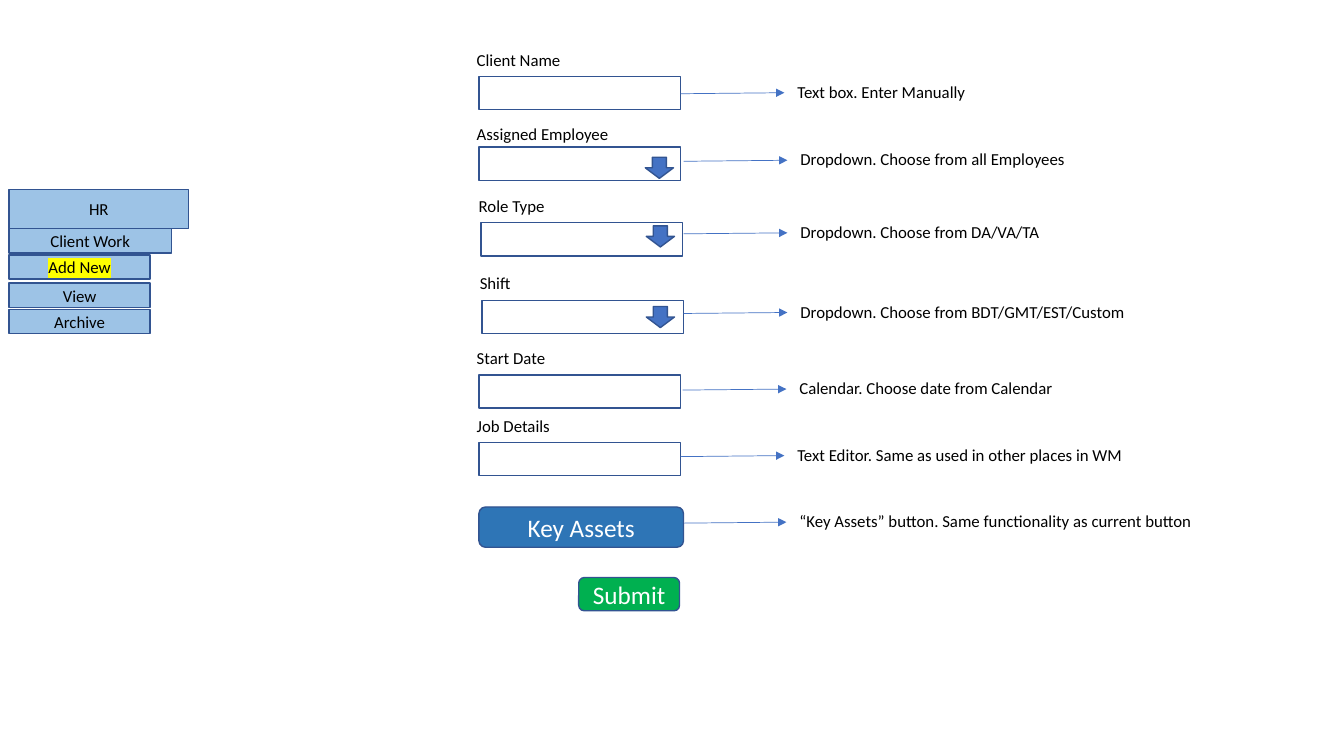
import pptx
import pptx.util
import pptx.dml.color
import pptx.enum.shapes
import pptx.enum.text
import pptx.oxml
import pptx.oxml.ns

PX = 9144  # 100 px to the inch
FONT = "Calibri"
BLACK, WHITE, YELLOW = "000000", "FFFFFF", "FFFF00"
OUTLINE, BLUE, MENU_BLUE = "325491", "4472C4", "9DC3E6"
SHAPE = pptx.enum.shapes.MSO_SHAPE

# Menu: text, top, width, height, highlight
MENU = [
    ("HR", 188, 178, 39, None),
    ("Client Work", 227, 161, 24, None),
    ("Add New", 253, 140, 24, YELLOW),
    ("View", 281, 140, 24, None),
    ("Archive", 307, 140, 24, None),
]
MENU_LEFT = 9

# Form fields: label, label width, label top, box left, box top, dropdown arrow (left, top)
FIELDS = [
    ("Client Name", 104, 44, 475, 76, None),
    ("Assigned Employee", 152, 118, 475, 146, (640, 156)),
    ("Role Type", 86, 189, 477, 221, (641, 224)),
    ("Shift", 51, 266, 478, 298, (641, 304)),
    ("Start Date", 89, 340, 475, 372, None),
    ("Job Details", 94, 408, 475, 439, None),
]
BOX_W, BOX_H = 200, 33

# Notes: text, text width, pointer start x, pointer start y
NOTES = [
    ("Text box. Enter Manually", 188, 675, 93),
    ("Dropdown. Choose from all Employees", 285, 678, 160),
    ("Dropdown. Choose from DA/VA/TA", 260, 678, 232),
    ("Dropdown. Choose from BDT/GMT/EST/Custom", 345, 678, 311),
    ("Calendar. Choose date from Calendar", 274, 677, 387),
    ("Text Editor. Same as used in other places in WM", 346, 675, 453),
    ("“Key Assets” button. Same functionality as current button", 414, 677, 519),
]
POINTER_W, NOTE_GAP, NOTE_RISE = 103, 3, 17
TEXT_H = 30

# Buttons: text, left, top, width, height, fill
BUTTONS = [
    ("Key Assets", 475, 503, 203, 40, "2E75B6"),
    ("Submit", 574, 573, 100, 33, "00B050"),
]


def px(*lengths):
    return [pptx.util.Emu(n * PX) for n in lengths]


def rgb(value):
    return pptx.dml.color.RGBColor.from_string(value)


def write(tf, text, size, color, highlight=None):
    p = tf.paragraphs[0]
    p.font.name = FONT
    p.font.size = pptx.util.Pt(size)
    p.font.color.rgb = rgb(color)
    r = p.add_run()
    r.text = text
    if highlight:
        ns = pptx.oxml.ns.nsdecls("a")
        r.font._element.append(pptx.oxml.parse_xml(
            f'<a:highlight {ns}><a:srgbClr val="{highlight}"/></a:highlight>'))
    return p


def add_shape(kind, left, top, width, height, fill=None):
    sp = slide.shapes.add_shape(kind, *px(left, top, width, height))
    sp.shadow.inherit = False
    if fill:
        sp.fill.solid()
        sp.fill.fore_color.rgb = rgb(fill)
    else:
        sp.fill.background()
    sp.line.color.rgb = rgb(OUTLINE)
    sp.line.width = pptx.util.Pt(1)
    return sp


def add_filled_text(kind, box, fill, text, size, color, highlight=None):
    tf = add_shape(kind, *box, fill).text_frame
    tf.vertical_anchor = pptx.enum.text.MSO_ANCHOR.MIDDLE
    p = write(tf, text, size, color, highlight)
    p.alignment = pptx.enum.text.PP_ALIGN.CENTER


def add_text(text, left, top, width):
    tf = slide.shapes.add_textbox(*px(left, top, width, TEXT_H)).text_frame
    tf.word_wrap = False
    tf.auto_size = pptx.enum.text.MSO_AUTO_SIZE.SHAPE_TO_FIT_TEXT
    write(tf, text, 12, BLACK)


def add_pointer(x, y):
    line = slide.shapes.add_connector(
        pptx.enum.shapes.MSO_CONNECTOR.STRAIGHT, *px(x, y, x + POINTER_W, y - 1))
    line.line.color.rgb = rgb(BLUE)
    line.line.width = pptx.util.Pt(0.5)
    ns = pptx.oxml.ns.nsdecls("a")
    line.line._get_or_add_ln().append(
        pptx.oxml.parse_xml(f'<a:tailEnd {ns} type="triangle"/>'))
    line._element.spPr.append(pptx.oxml.parse_xml(f"<a:effectLst {ns}/>"))


prs = pptx.Presentation()
prs.slide_width, prs.slide_height = px(1333, 750)
slide = prs.slides.add_slide(prs.slide_layouts[6])

# Side menu
for text, top, width, height, highlight in MENU:
    add_filled_text(SHAPE.RECTANGLE, (MENU_LEFT, top, width, height),
                    MENU_BLUE, text, 12, BLACK, highlight)

# Form fields
for label, label_w, label_top, left, top, arrow in FIELDS:
    add_text(label, left - 12, label_top, label_w)
    add_shape(SHAPE.RECTANGLE, left, top, BOX_W, BOX_H)
    if arrow:
        add_shape(SHAPE.DOWN_ARROW, *arrow, 28, 21, BLUE)

# Pointers and notes
for text, width, x, y in NOTES:
    add_pointer(x, y)
    add_text(text, x + POINTER_W + NOTE_GAP, y - NOTE_RISE, width)

# Buttons
for text, left, top, width, height, fill in BUTTONS:
    add_filled_text(SHAPE.ROUNDED_RECTANGLE, (left, top, width, height),
                    fill, text, 18, WHITE)

prs.save("out.pptx")
